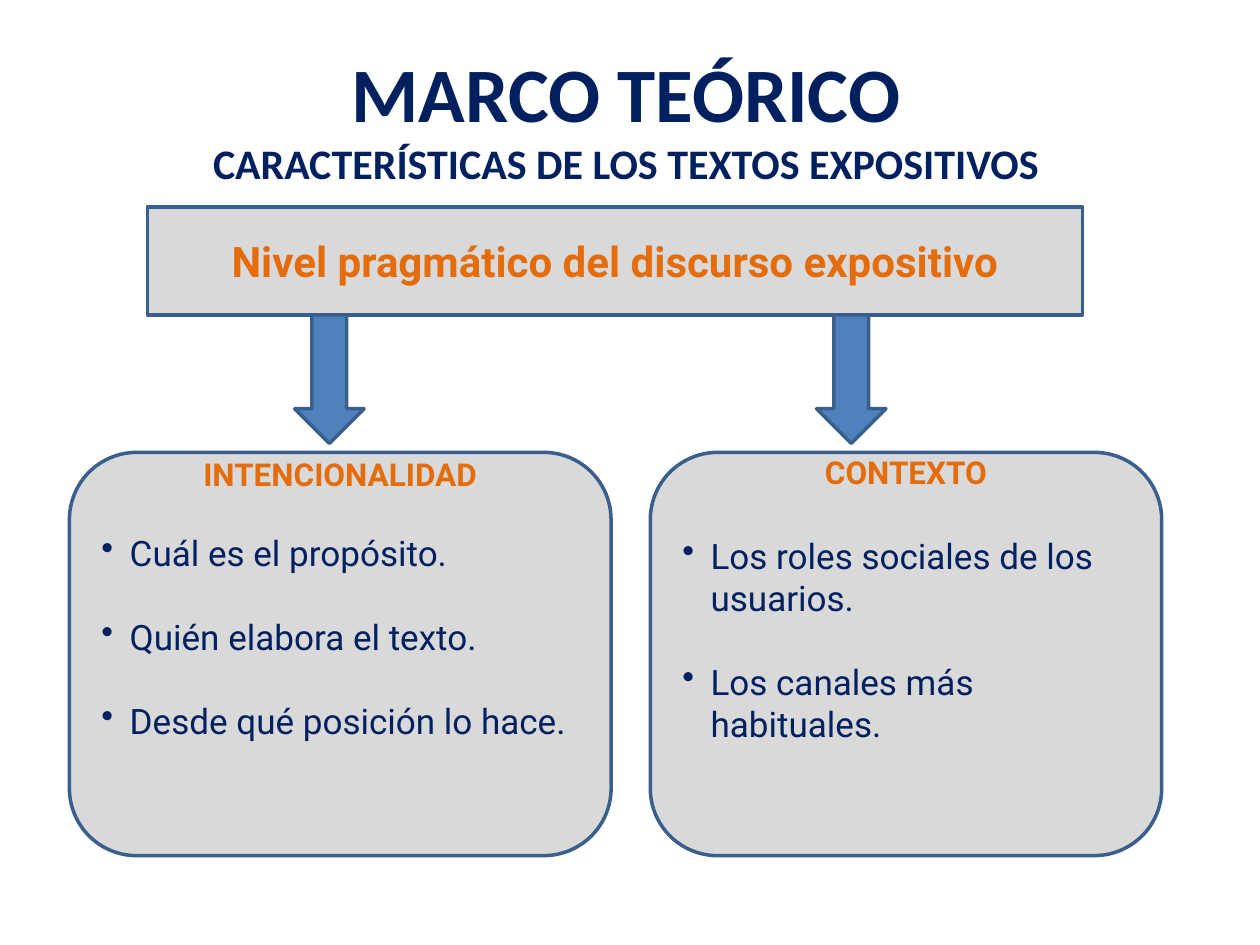
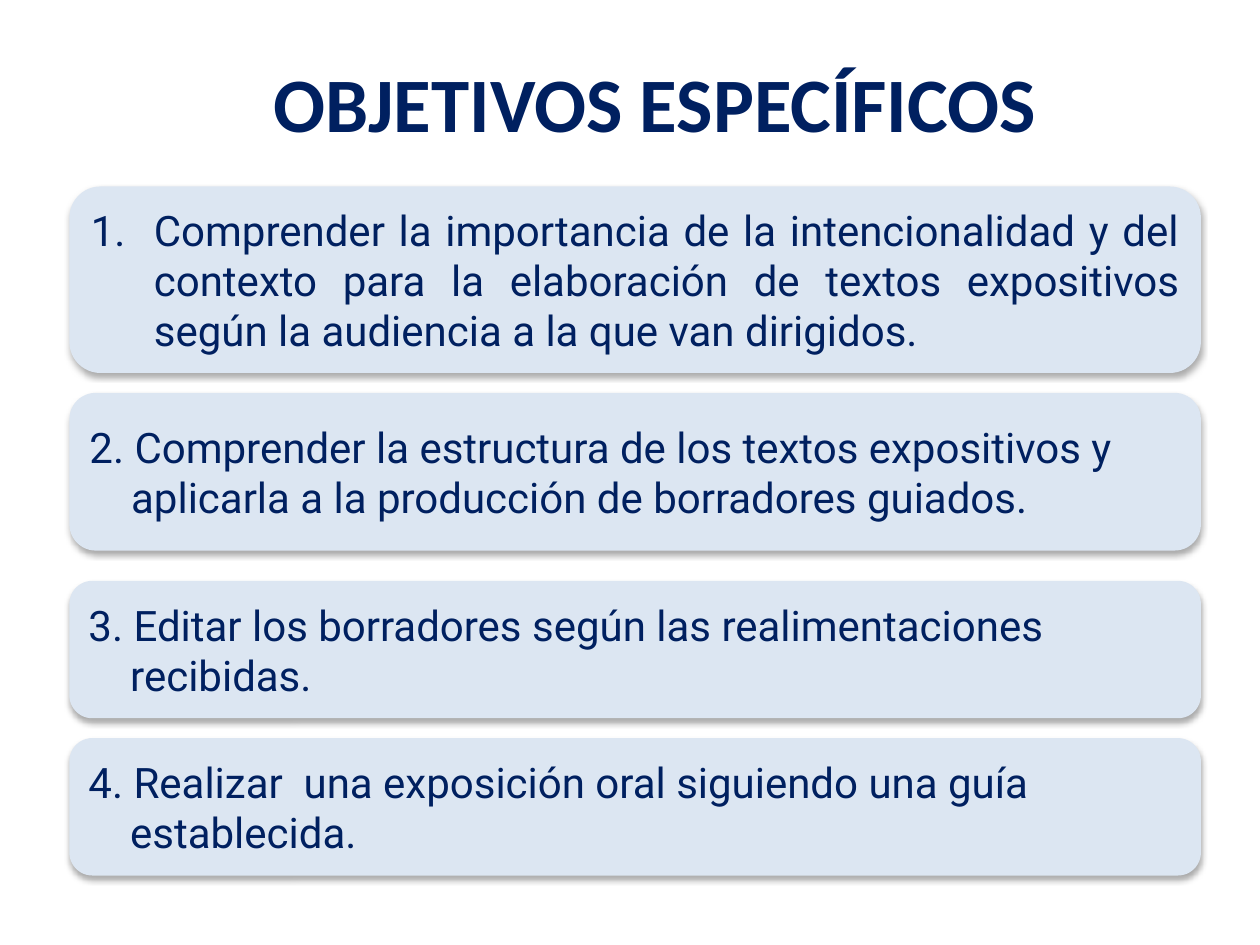
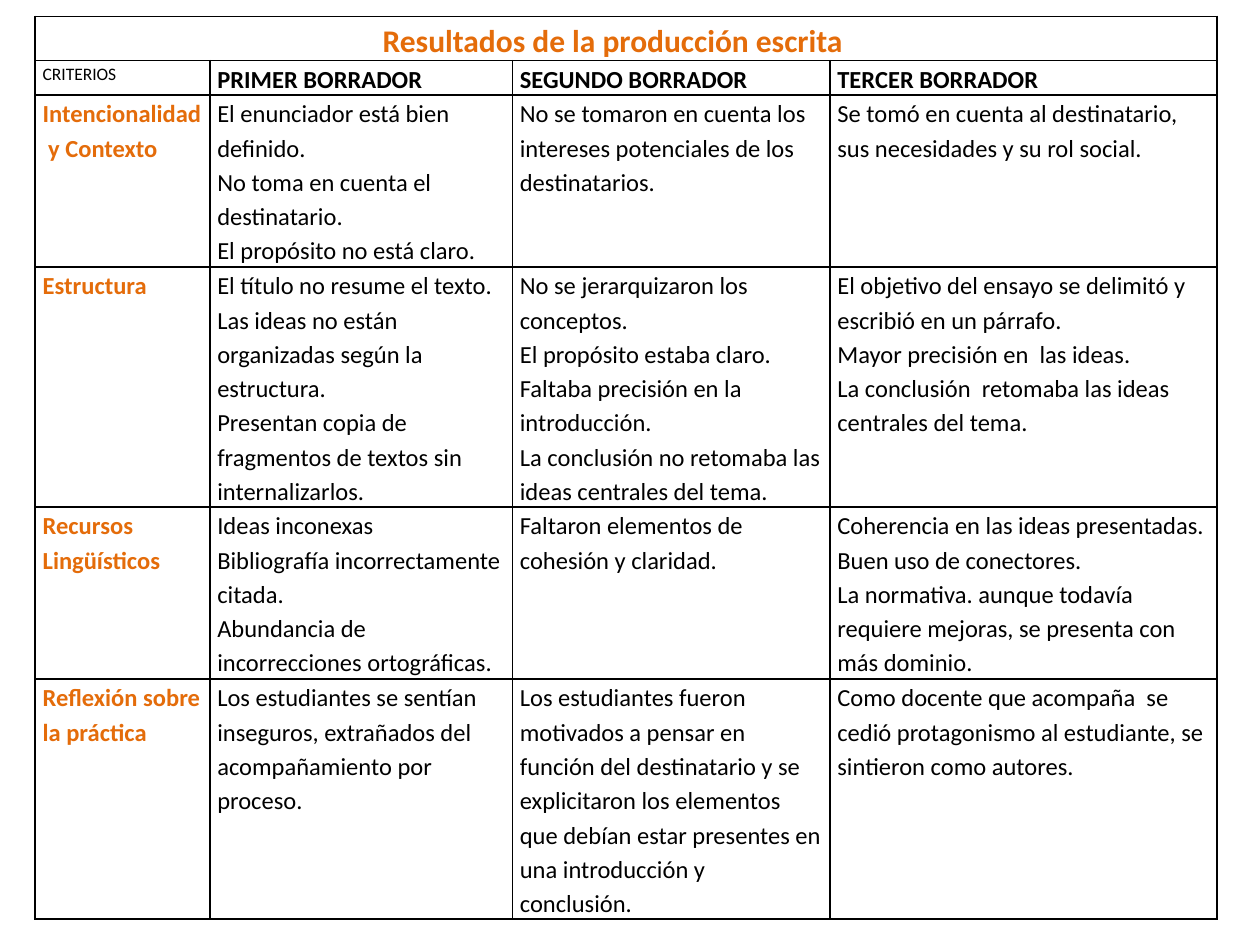
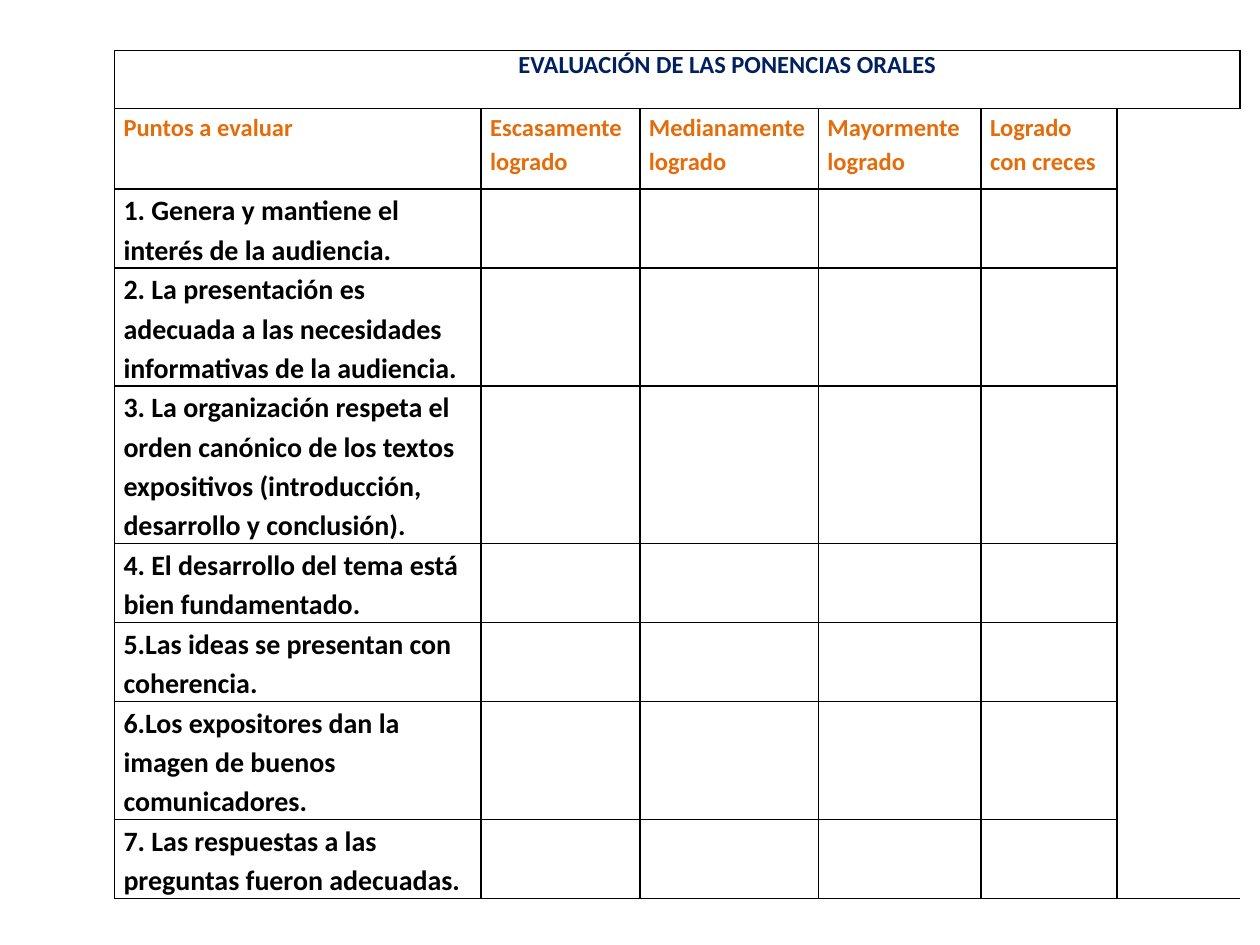
from lxml.etree import SubElement
from pptx import Presentation
from pptx.dml.color import RGBColor
from pptx.enum.shapes import MSO_SHAPE
from pptx.enum.text import MSO_ANCHOR, MSO_AUTO_SIZE, PP_ALIGN
from pptx.oxml.ns import qn
from pptx.util import Cm, Pt

NAVY, ORANGE, BLACK = "002060", "E46C0A", "000000"
GREY, STEEL, BLUE, PALE = "D9D9D9", "3A5F8C", "4F81BD", "DCE6F2"
TITLE_OUTLINE = "5E457C"
HEADING, READING = "Calibri", "Roboto"

CHARACTERISTICS = [
    ((1.4, 9.12, 10.92, 8.13), "INTENCIONALIDAD", 22, PP_ALIGN.JUSTIFY,
     ["Cuál es el propósito.", "Quién elabora el texto.", "Desde qué posición lo hace."]),
    ((13.11, 9.12, 10.31, 8.13), "CONTEXTO", 25, PP_ALIGN.LEFT,
     ["Los roles sociales de los usuarios.", "Los canales más habituales."]),
]

GOALS = [
    (3.76, 3.76, ["Comprender la importancia de la intencionalidad y del contexto para la "
                  "elaboración de textos expositivos según la audiencia a la que van dirigidos."]),
    (7.92, 3.18, ["2. Comprender la estructura de los textos expositivos y",
                  "aplicarla a la producción de borradores guiados."]),
    (11.71, 2.77, ["3. Editar los borradores según las realimentaciones", "recibidas."]),
    (14.88, 2.77, ["4. Realizar  una exposición oral siguiendo una guía", "establecida."]),
]

DRAFTS = ["CRITERIOS", "PRIMER BORRADOR", "SEGUNDO BORRADOR", "TERCER BORRADOR"]
RESULTS = [
    ("Intencionalidad  y Contexto",
     ["El enunciador está bien definido.", "No toma en cuenta el destinatario.",
      "El propósito no está claro."],
     ["No se tomaron en cuenta los intereses potenciales de los destinatarios."],
     ["Se tomó en cuenta al destinatario, sus necesidades y su rol social."]),
    ("Estructura",
     ["El título no resume el texto.", "Las ideas no están organizadas según la estructura.",
      "Presentan copia de fragmentos de textos sin internalizarlos."],
     ["No se jerarquizaron los conceptos.", "El propósito estaba claro.",
      "Faltaba precisión en la introducción.",
      "La conclusión no retomaba las ideas centrales del tema."],
     ["El objetivo del ensayo se delimitó y escribió en un párrafo.",
      "Mayor precisión en  las ideas.",
      "La conclusión  retomaba las ideas centrales del tema."]),
    ("Recursos Lingüísticos",
     ["Ideas inconexas", "Bibliografía incorrectamente citada.",
      "Abundancia de incorrecciones ortográficas."],
     ["Faltaron elementos de cohesión y claridad."],
     ["Coherencia en las ideas presentadas.", "Buen uso de conectores.",
      "La normativa. aunque todavía requiere mejoras, se presenta con más dominio."]),
    ("Reflexión sobre la práctica",
     ["Los estudiantes se sentían inseguros, extrañados del acompañamiento por proceso."],
     ["Los estudiantes fueron motivados a pensar en función del destinatario y se explicitaron "
      "los elementos que debían estar presentes en una introducción y conclusión."],
     ["Como docente que acompaña  se cedió protagonismo al estudiante, se sintieron como "
      "autores."]),
]

RATINGS = ["Puntos a evaluar", "Escasamente logrado", "Medianamente logrado",
           "Mayormente logrado", "Logrado con creces"]
TALK_POINTS = [
    ("1. Genera y mantiene el interés de la audiencia.", 2),
    ("2. La presentación es adecuada a las necesidades informativas de la audiencia.", 3),
    ("3. La organización respeta el orden canónico de los textos expositivos "
     "(introducción, desarrollo y conclusión).", 4),
    ("4. El desarrollo del tema está bien fundamentado.", 2),
    ("5.Las ideas se presentan con coherencia.", 2),
    ("6.Los expositores dan la imagen de buenos comunicadores.", 3),
    ("7. Las respuestas a las preguntas fueron adecuadas.", 2),
]


def rgb(color):
    """Turn a hex string into a colour."""
    return RGBColor.from_string(color)


def apply_format(target, values):
    """Set each named attribute on the target."""
    for name, value in values.items():
        setattr(target, name, value)


def add_xml(parent, tag, **attributes):
    """Append a DrawingML element and return it."""
    return SubElement(parent, qn(f"a:{tag}"), {key: str(value) for key, value in attributes.items()})


def write(frame, lines, size, color, font=READING, bold=False, **layout):
    """Fill a text frame with equally styled paragraphs and return them."""
    first = frame.paragraphs[0]
    paragraphs = [first] + [frame.add_paragraph() for _ in lines[1:]]
    for paragraph, line in zip(paragraphs, lines):
        run = paragraph.add_run()
        run.text = line
        apply_format(run.font, {"size": Pt(size), "bold": bold, "name": font})
        run.font.color.rgb = rgb(color)
        apply_format(paragraph, layout)
    return paragraphs


def indent(paragraph, left, first, bullet=None, **attributes):
    """Set paragraph indents in cm and an optional bullet."""
    properties = paragraph._p.get_or_add_pPr()
    properties.set("marL", str(Cm(left)))
    properties.set("indent", str(Cm(first)))
    if bullet:
        add_xml(properties, bullet, **attributes)


def outline_text(paragraph):
    """Draw the thin heading outline around the letters."""
    for run in paragraph.runs:
        properties = run._r.get_or_add_rPr()
        line = add_xml(properties, "ln", w=Pt(0.71))
        add_xml(add_xml(line, "solidFill"), "srgbClr", val=TITLE_OUTLINE)
        properties.insert(0, line)


def add_title(slide, box, title, subtitle=None):
    """Place the slide title with an optional second line."""
    heading = slide.shapes.title
    apply_format(heading, dict(zip(("left", "top", "width", "height"), map(Cm, box))))
    frame = heading.text_frame
    apply_format(frame, {"word_wrap": True, "auto_size": MSO_AUTO_SIZE.NONE,
                         "vertical_anchor": MSO_ANCHOR.TOP})
    lines = [title, subtitle] if subtitle else [title]
    for paragraph, size in zip(write(frame, lines, 44, NAVY, HEADING, True,
                                     alignment=PP_ALIGN.CENTER), (44, 24)):
        paragraph.runs[0].font.size = Pt(size)
        outline_text(paragraph)


def add_block(slide, kind, box, fill, line=None):
    """Add a flat filled shape, with a border if a line colour is given."""
    block = slide.shapes.add_shape(kind, *map(Cm, box))
    block.shadow.inherit = False
    block.fill.solid()
    block.fill.fore_color.rgb = rgb(fill)
    if line:
        block.line.color.rgb = rgb(line)
        block.line.width = Pt(2)
    else:
        block.line.fill.background()
    apply_format(block.text_frame, {"word_wrap": True, "vertical_anchor": MSO_ANCHOR.MIDDLE})
    return block


def add_characteristic(slide, box, heading, heading_gap, alignment, features):
    """Add a rounded card with a heading and a bulleted list."""
    card = add_block(slide, MSO_SHAPE.ROUNDED_RECTANGLE, box, GREY, STEEL)
    frame = card.text_frame
    apply_format(frame, {"margin_top": 0, "margin_bottom": Cm(2.24)})
    write(frame, [heading], 18, ORANGE, bold=True, alignment=PP_ALIGN.CENTER,
          space_after=Pt(heading_gap))
    for number, feature in enumerate(features):
        paragraph = frame.add_paragraph()
        run = paragraph.add_run()
        run.text = feature
        apply_format(run.font, {"size": Pt(20), "name": READING})
        run.font.color.rgb = rgb(NAVY)
        apply_format(paragraph, {"alignment": alignment, "space_before": Pt(24 if number else 0)})
        indent(paragraph, 0.57, -0.57, "buChar", char="•")


def add_goal(slide, box, lines):
    """Add a shadowed card holding one goal; a single line is numbered."""
    card = add_block(slide, MSO_SHAPE.ROUNDED_RECTANGLE, box, PALE)
    effects = card._element.spPr.find(qn("a:effectLst"))
    shadow = add_xml(effects, "outerShdw", blurRad=Pt(3.5), dist=Pt(2.2), dir=5400000,
                     rotWithShape=0)
    add_xml(add_xml(shadow, "srgbClr", val=BLACK), "alpha", val=32000)
    paragraphs = write(card.text_frame, lines, 24, NAVY, alignment=PP_ALIGN.LEFT)
    if len(lines) == 1:
        paragraphs[0].alignment = PP_ALIGN.JUSTIFY
        indent(paragraphs[0], 1.27, -1.27, "buAutoNum", type="arabicPeriod")
    else:
        indent(paragraphs[1], 0.84, 0)


def set_borders(cell, sides):
    """Draw black borders on the named sides and none on the others."""
    properties = cell._tc.get_or_add_tcPr()
    for old in list(properties):
        properties.remove(old)
    for side in "LRTB":
        line = add_xml(properties, f"ln{side}", w=Pt(1))
        if side in sides:
            add_xml(add_xml(line, "solidFill"), "srgbClr", val=BLACK)
        else:
            add_xml(line, "noFill")
    cell.fill.background()


def add_grid(slide, left, top, widths, heights, side_margin):
    """Add a plain table with black borders from its column and row sizes."""
    grid = slide.shapes.add_table(len(heights), len(widths), Cm(left), Cm(top),
                                  Cm(sum(widths)), Cm(sum(heights))).table
    apply_format(grid, {"first_row": False, "horz_banding": False})
    for column, width in zip(grid.columns, widths):
        column.width = Cm(width)
    for row, height in zip(grid.rows, heights):
        row.height = Cm(height)
    for cell in grid.iter_cells():
        apply_format(cell, {"margin_left": Cm(side_margin), "margin_right": Cm(side_margin),
                            "margin_top": 0, "margin_bottom": 0})
        set_borders(cell, "LRTB")
    return grid


def fill_cell(cell, lines, size, color=BLACK, bold=False, **layout):
    """Write cell text in the table style."""
    return write(cell.text_frame, lines, size, color, HEADING, bold,
                 **{"line_spacing": 1.15, **layout})


def build_framework(slide):
    """Theory slide: a banner with arrows to two cards."""
    add_title(slide, (1.19, 0.79, 22.86, 3.18), "MARCO TEÓRICO",
              "CARACTERÍSTICAS DE LOS TEXTOS EXPOSITIVOS")
    for card in CHARACTERISTICS:
        add_characteristic(slide, *card)
    banner = add_block(slide, MSO_SHAPE.ROUNDED_RECTANGLE, (2.97, 4.17, 18.85, 2.18), GREY, STEEL)
    banner.adjustments[0] = 0
    write(banner.text_frame, ["Nivel pragmático del discurso expositivo"], 24, ORANGE, bold=True,
          alignment=PP_ALIGN.CENTER)
    for arrow_left in (5.94, 16.46):
        add_block(slide, MSO_SHAPE.DOWN_ARROW, (arrow_left, 6.35, 1.4, 2.59), BLUE, STEEL)


def build_goals(slide):
    """Goals slide: a column of cards."""
    add_title(slide, (1.78, 0.99, 22.86, 3.18), "OBJETIVOS ESPECÍFICOS")
    for top, height, lines in GOALS:
        add_goal(slide, (1.4, top, 22.81, height), lines)


def build_results(slide):
    """Results slide: criteria compared over three drafts."""
    grid = add_grid(slide, 0.71, 0.33, (3.52, 6.1, 6.4, 7.8),
                    (0.89, 0.69, 3.47, 4.83, 3.47, 4.83), 0.15)
    banner = grid.cell(0, 0)
    banner.merge(grid.cell(0, 3))
    banner.margin_right = Cm(0.68)
    fill_cell(banner, ["Resultados de la producción escrita"], 18, ORANGE, True,
              alignment=PP_ALIGN.CENTER)
    for column, draft in enumerate(DRAFTS):
        fill_cell(grid.cell(1, column), [draft], 14 if column else 10, bold=column > 0)
    for row, (criterion, *findings) in enumerate(RESULTS, 2):
        fill_cell(grid.cell(row, 0), [criterion], 14, ORANGE, True)
        for column, lines in enumerate(findings, 1):
            fill_cell(grid.cell(row, column), lines, 14)


def build_evaluation(slide):
    """Evaluation slide: a rating sheet for the talks."""
    heights = [1.17, 1.62] + [round(0.794 * lines, 2) for _, lines in TALK_POINTS] + [0.93]
    grid = add_grid(slide, 2.31, 1.02, (7.39, 3.2, 3.6, 3.28, 2.74, 0.46), heights, 0.18)
    foot = len(heights) - 1
    for row in range(1, foot):
        top = "T" if row == 1 else ""
        bottom = "B" if row == foot - 1 else ""
        set_borders(grid.cell(row, 5), "L" + top + bottom)
    for column in range(6):
        set_borders(grid.cell(foot, column), "T")
    for row, start, end in ((0, 0, 5), (foot, 0, 3), (foot, 4, 5)):
        grid.cell(row, start).merge(grid.cell(row, end))
    banner = grid.cell(0, 0)
    banner.margin_left = Cm(2.2)
    title, = fill_cell(banner, ["EVALUACIÓN DE LAS PONENCIAS ORALES"], 14, NAVY, True,
                       alignment=PP_ALIGN.CENTER, line_spacing=1.0)
    outline_text(title)
    for column, rating in enumerate(RATINGS):
        fill_cell(grid.cell(1, column), [rating], 14, ORANGE, True)
    for row, (point, _) in enumerate(TALK_POINTS, 2):
        fill_cell(grid.cell(row, 0), [point], 16, bold=True)


def main():
    """Build the four slides and save them."""
    deck = Presentation()
    apply_format(deck, {"slide_width": Cm(25.4), "slide_height": Cm(19.05)})
    title_only, blank = deck.slide_layouts[5], deck.slide_layouts[6]
    for build, layout in ((build_framework, title_only), (build_goals, title_only),
                          (build_results, blank), (build_evaluation, blank)):
        build(deck.slides.add_slide(layout))
    deck.save("out.pptx")


if __name__ == "__main__":
    main()
